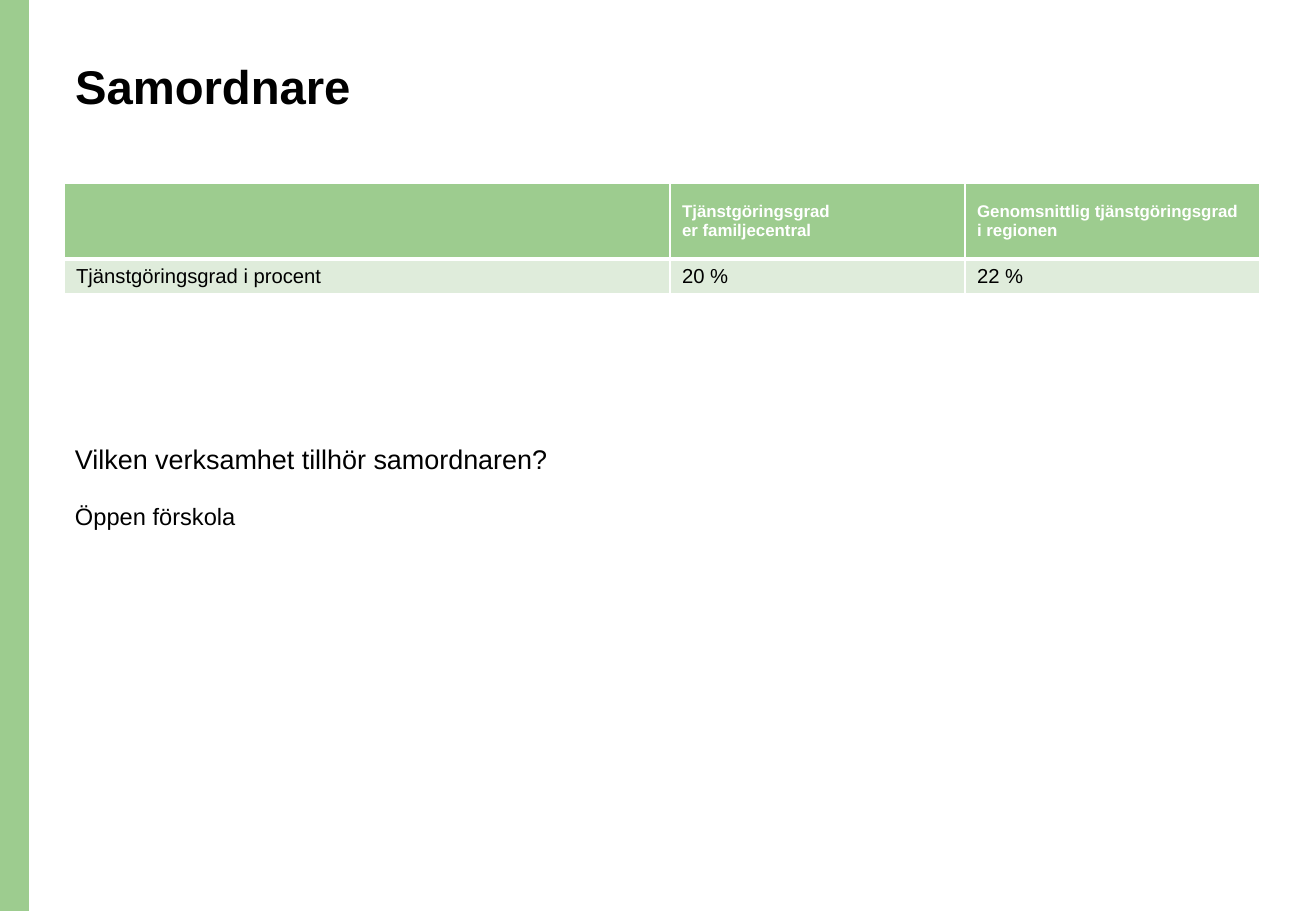
from dataclasses import dataclass
from typing import NamedTuple

from lxml.etree import SubElement
from pptx import Presentation
from pptx.dml.color import RGBColor
from pptx.enum.shapes import MSO_SHAPE as Preset
from pptx.enum.text import MSO_ANCHOR as Anchor, MSO_AUTO_SIZE as AutoSize, PP_ALIGN as Align
from pptx.oxml.ns import qn
from pptx.util import Emu, Pt

EMU_PER_PX = 7526


@dataclass(frozen=True)
class Theme:
    font: str = "Arial"
    green: str = "9DCC8F"
    pale: str = "DFECDB"
    black: str = "000000"
    white: str = "FFFFFF"
    title: int = 28
    question: int = 16
    answer: int = 14
    cell: int = 12
    header: int = 10
    rule: int = 1
    header_rule: int = 3


THEME = Theme()


class Frame(NamedTuple):
    left: int
    top: int
    width: int
    height: int

    def emu(self) -> list[Emu]:
        return [px(length) for length in self]


class Style(NamedTuple):
    size: int
    color: str = THEME.black
    bold: bool = False
    spacing: float = 1.0


class Label(NamedTuple):
    text: str
    frame: Frame
    style: Style


class Row(NamedTuple):
    height: int
    fill: str
    style: Style
    top_rule: int
    bottom_rule: int
    texts: tuple[str, ...]


SLIDE_SIZE = (1316, 911)
STRIPE = Frame(0, 0, 29, 911)
TITLE = Label("Samordnare", Frame(63, 58, 1135, 124),
              Style(THEME.title, bold=True, spacing=0.9))
LABELS = (
    Label("Vilken verksamhet tillhör samordnaren?", Frame(63, 440, 988, 76),
          Style(THEME.question, spacing=0.9)),
    Label("Öppen förskola", Frame(63, 496, 505, 41), Style(THEME.answer)),
)
TABLE_LEFT, TABLE_TOP = 64, 183
COLUMNS = (606, 295, 295)
ROWS = (
    Row(76, THEME.green, Style(THEME.header, THEME.white, True),
        THEME.rule, THEME.header_rule,
        ("", "Tjänstgöringsgrad\ner familjecentral",
         "Genomsnittlig tjänstgöringsgrad\ni regionen")),
    Row(35, THEME.pale, Style(THEME.cell), THEME.header_rule, THEME.rule,
        ("Tjänstgöringsgrad i procent", "20 %", "22 %")),
)


def px(length: int) -> Emu:
    return Emu(length * EMU_PER_PX)


def write(text_frame, text: str, style: Style) -> None:
    text_frame.text = text
    text_frame.word_wrap = True
    for para in text_frame.paragraphs:
        para.alignment = Align.LEFT
        para.line_spacing = style.spacing
        for span in para.runs:
            span.font.name = THEME.font
            span.font.size = Pt(style.size)
            span.font.bold = style.bold
            span.font.color.rgb = RGBColor.from_string(style.color)


def draw_stripe(page) -> None:
    stripe = page.shapes.add_shape(Preset.RECTANGLE, *STRIPE.emu())
    stripe.shadow.inherit = False
    stripe.fill.solid()
    stripe.fill.fore_color.rgb = RGBColor.from_string(THEME.green)
    stripe.line.fill.background()


def fill_label(box, label: Label) -> None:
    box.left, box.top, box.width, box.height = label.frame.emu()
    box.text_frame.vertical_anchor = Anchor.TOP
    box.text_frame.auto_size = AutoSize.NONE
    write(box.text_frame, label.text, label.style)


def add_borders(cell, row: Row) -> None:
    properties = cell._tc.get_or_add_tcPr()
    widths = {"L": THEME.rule, "R": THEME.rule, "T": row.top_rule, "B": row.bottom_rule}
    for side, width in widths.items():
        line = SubElement(properties, qn(f"a:ln{side}"), w=str(Pt(width)))
        solid = SubElement(line, qn("a:solidFill"))
        SubElement(solid, qn("a:srgbClr"), val=THEME.white)


def draw_table(page) -> None:
    frame = Frame(TABLE_LEFT, TABLE_TOP, sum(COLUMNS), sum(row.height for row in ROWS))
    table = page.shapes.add_table(len(ROWS), len(COLUMNS), *frame.emu()).table
    table.horz_banding = False
    for column, width in zip(table.columns, COLUMNS):
        column.width = px(width)
    for table_row, row in zip(table.rows, ROWS):
        table_row.height = px(row.height)
        for cell, text in zip(table_row.cells, row.texts):
            add_borders(cell, row)
            cell.fill.solid()
            cell.fill.fore_color.rgb = RGBColor.from_string(row.fill)
            cell.vertical_anchor = Anchor.MIDDLE
            write(cell.text_frame, text, row.style)


def main() -> None:
    deck = Presentation()
    deck.slide_width, deck.slide_height = (px(length) for length in SLIDE_SIZE)
    page = deck.slides.add_slide(deck.slide_layouts.get_by_name("Title Only"))
    draw_stripe(page)
    fill_label(page.shapes.title, TITLE)
    draw_table(page)
    for label in LABELS:
        fill_label(page.shapes.add_textbox(*label.frame.emu()), label)
    deck.save("out.pptx")


if __name__ == "__main__":
    main()
